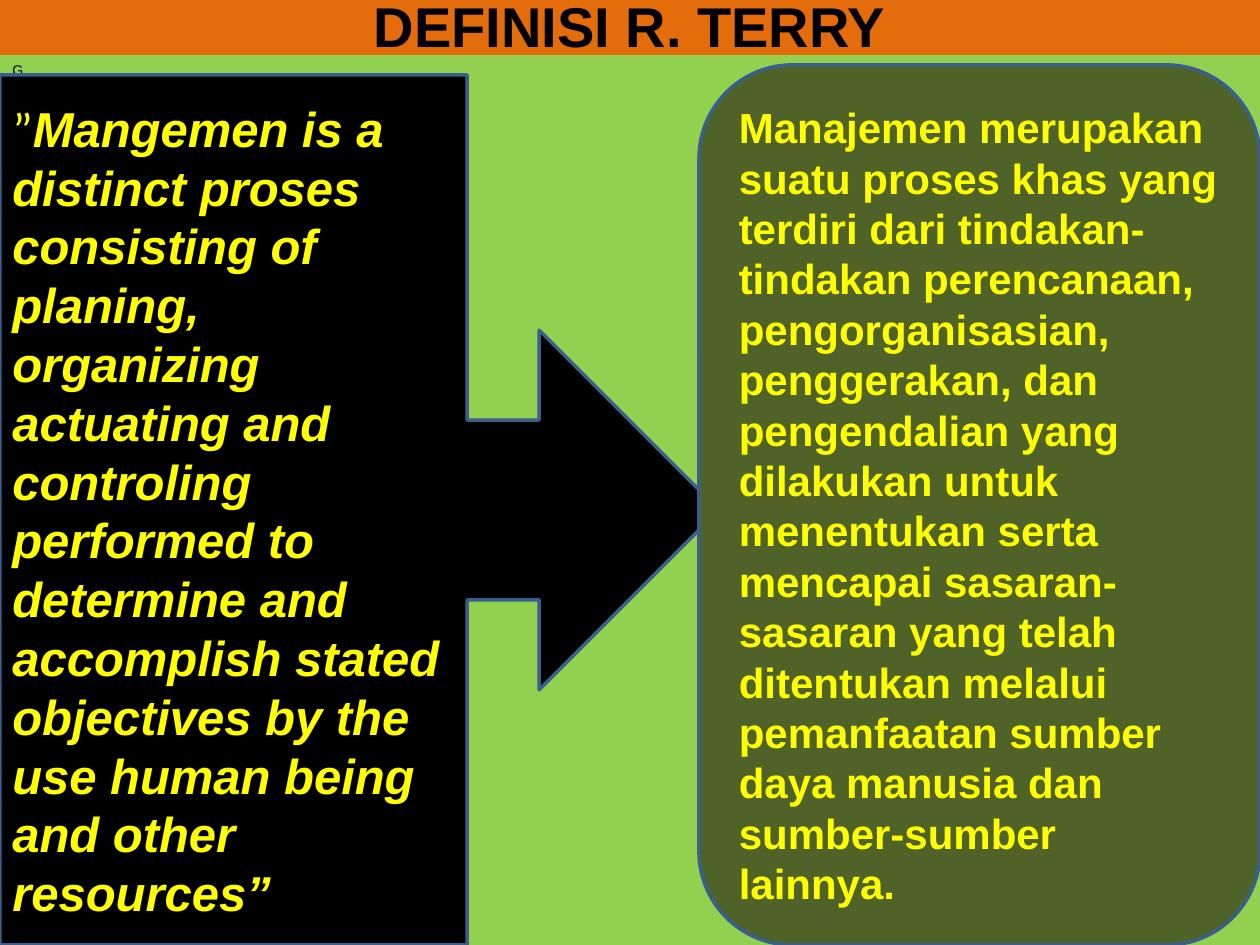
from pptx import Presentation
from pptx.dml.color import RGBColor
from pptx.enum.shapes import MSO_SHAPE as SHAPE
from pptx.enum.text import MSO_ANCHOR as ANCHOR, PP_ALIGN as ALIGN
from pptx.util import Pt

PX = 914400 / 126
BLACK, YELLOW, BORDER = "000000", "FFFF00", "3A5F8C"


def px(n):
    return round(n * PX)


def rgb(color):
    return RGBColor.from_string(color)


class Deck:
    """Holds the text style and the current slide."""

    font = "Arial"

    def __init__(self, width, height):
        self.prs = Presentation()
        self.prs.slide_width, self.prs.slide_height = px(width), px(height)
        self.s = self.prs.slides.add_slide(self.prs.slide_layouts[6])

    def box(self, kind, left, top, width, height, fill, line=None):
        sp = self.s.shapes.add_shape(kind, px(left), px(top), px(width), px(height))
        sp.shadow.inherit = False
        sp.fill.solid()
        sp.fill.fore_color.rgb = rgb(fill)
        if line:
            sp.line.color.rgb = rgb(line)
            sp.line.width = Pt(2)
        else:
            sp.line.fill.background()
        return sp

    def text(self, sp, text, size, color, bold=True, italic=False,
             align=ALIGN.LEFT, anchor=ANCHOR.MIDDLE, spacing=None):
        tf = sp.text_frame
        tf.word_wrap = True
        tf.vertical_anchor = anchor
        p = tf.paragraphs[0]
        p.alignment = align
        p.line_spacing = spacing
        p.font.size = Pt(size)
        p.font.color.rgb = rgb(color)
        r = p.add_run()
        r.text = text
        r.font.name = self.font
        r.font.bold, r.font.italic = bold, italic
        return p


def main():
    deck = Deck(1260, 945)

    title = deck.box(SHAPE.RECTANGLE, 0, -4, 1260, 59, "E46C0A")
    deck.text(title, "DEFINISI R. TERRY", 32, BLACK, align=ALIGN.CENTER)

    body = deck.box(SHAPE.RECTANGLE, 0, 55, 1260, 890, "92D050")
    deck.text(body, "G", 8, BLACK, bold=False, anchor=ANCHOR.TOP)

    quote = deck.box(SHAPE.RIGHT_ARROW_CALLOUT, 0, 75, 719, 870, BLACK, BORDER)
    p = deck.text(quote, "”", 28, YELLOW, bold=False, spacing=Pt(33.6))
    p.runs[0].font.name = "Calibri"
    r = p.add_run()
    r.text = ("Mangemen is a distinct proses consisting of planing, organizing "
              "actuating and controling performed to determine and accomplish "
              "stated objectives by the use human being and other resources”")
    r.font.name = deck.font
    r.font.bold = r.font.italic = True

    meaning = deck.box(SHAPE.ROUNDED_RECTANGLE, 699, 65, 561, 880, "4F6228", BORDER)
    deck.text(meaning,
              "Manajemen merupakan suatu proses khas yang terdiri dari "
              "tindakan-tindakan perencanaan, pengorganisasian, penggerakan, dan "
              "pengendalian yang dilakukan untuk menentukan serta mencapai "
              "sasaran-sasaran yang telah ditentukan melalui pemanfaatan sumber "
              "daya manusia dan sumber-sumber lainnya.",
              24, YELLOW, spacing=Pt(28.8))

    deck.prs.save("out.pptx")


if __name__ == "__main__":
    main()
